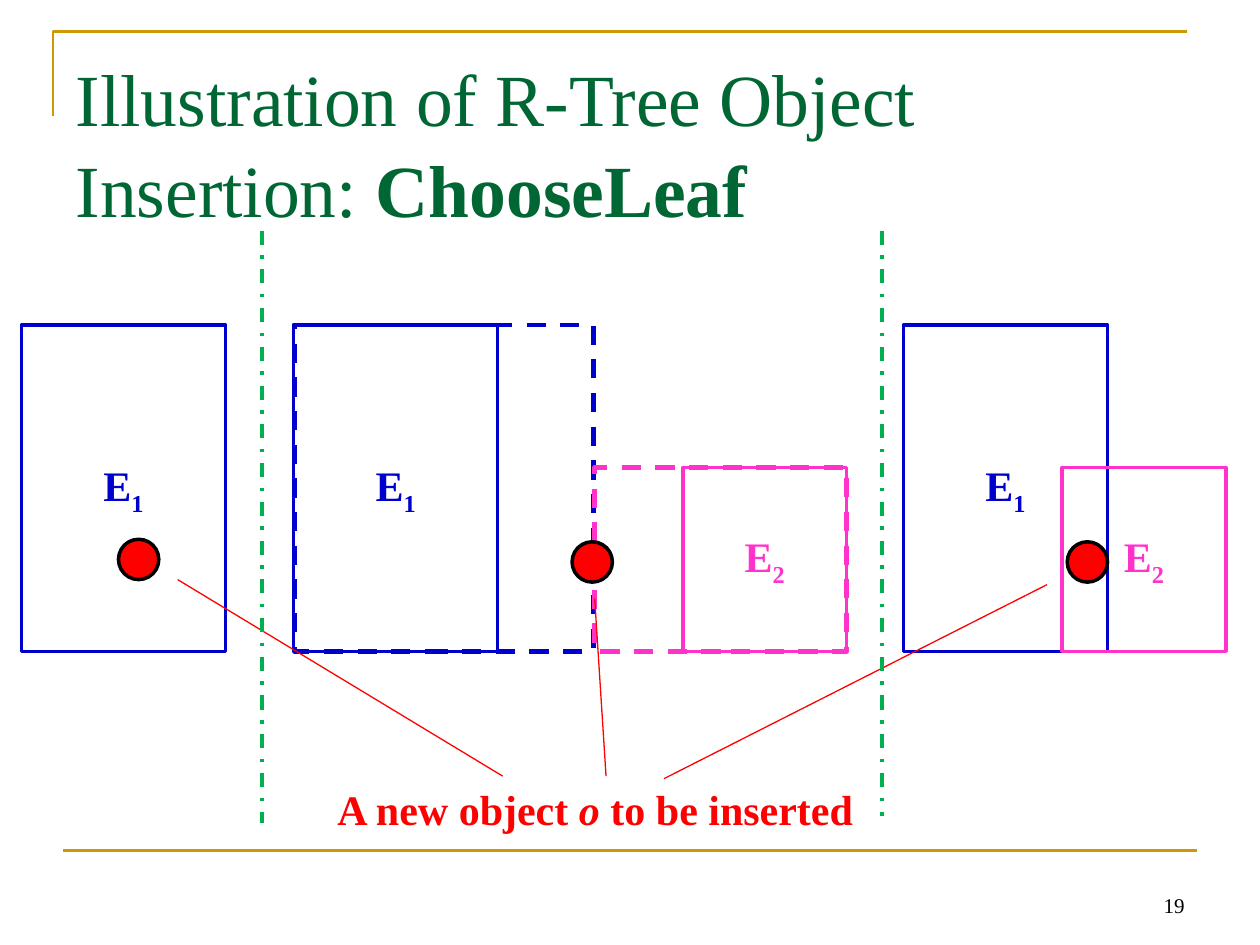
from lxml.etree import SubElement
from pptx import Presentation
from pptx.dml.color import RGBColor
from pptx.enum.dml import MSO_LINE_DASH_STYLE as Dash
from pptx.enum.shapes import MSO_CONNECTOR as Connector, MSO_SHAPE as Shape
from pptx.enum.text import MSO_ANCHOR as Anchor, PP_ALIGN as Align
from pptx.oxml.ns import qn
from pptx.util import Inches, Pt

COLORS = {
    "gold": "CC9900", "title": "006633", "blue": "0000CC", "pink": "FF33CC",
    "red": "FF0000", "green": "00B050", "black": "000000", "white": "FFFFFF",
}
FONT = "Times New Roman"
E1_TOP, E1_SIZE = 2.58, (1.62, 2.59)
E2_TOP, E2_SIZE = 3.71, (1.3, 1.46)
OBJECT_SIZE = 0.32


def color(name):
    """Return the named palette colour."""
    return RGBColor.from_string(COLORS[name])


def set_font(paragraph, size, name, bold=None):
    """Format a whole paragraph."""
    paragraph.font.name = FONT
    paragraph.font.size = Pt(size)
    paragraph.font.bold = bold
    paragraph.font.color.rgb = color(name)


def set_line(line, name, width, dash=None):
    """Set the colour, width and dash of an outline."""
    line.color.rgb = color(name)
    line.width = Pt(width)
    if dash is not None:
        line.dash_style = dash


def add_line(slide, start, end, name, width, dash=None):
    """Draw a straight line without a shadow."""
    points = [Inches(value) for value in (*start, *end)]
    connector = slide.shapes.add_connector(Connector.STRAIGHT, *points)
    set_line(connector.line, name, width, dash)
    SubElement(connector._element.spPr, qn("a:effectLst"))


def add_outlined(slide, kind, box, line_color, width, fill=None, dash=None):
    """Draw a preset shape with an outline and an optional fill."""
    shape = slide.shapes.add_shape(kind, *[Inches(value) for value in box])
    shape.shadow.inherit = False
    if fill:
        shape.fill.solid()
        shape.fill.fore_color.rgb = color(fill)
    else:
        shape.fill.background()
    set_line(shape.line, line_color, width, dash)
    return shape


def add_entry(slide, left, top, size, name, number, fill="white"):
    """Draw a node entry rectangle labelled E with a subscript."""
    shape = add_outlined(slide, Shape.RECTANGLE, (left, top, *size), name, 2, fill)
    shape.text_frame.vertical_anchor = Anchor.MIDDLE
    paragraph = shape.text_frame.paragraphs[0]
    paragraph.alignment = Align.CENTER
    paragraph.add_run().text = "E"
    subscript = paragraph.add_run()
    subscript.text = number
    subscript.font._element.set("baseline", "-25000")
    set_font(paragraph, 24, name, True)


def add_e1(slide, left):
    """Draw entry E1."""
    add_entry(slide, left, E1_TOP, E1_SIZE, "blue", "1")


def add_e2(slide, left, fill="white"):
    """Draw entry E2."""
    add_entry(slide, left, E2_TOP, E2_SIZE, "pink", "2", fill)


def add_enlargement(slide, box, name):
    """Draw the dashed enlarged bounds of an entry."""
    add_outlined(slide, Shape.RECTANGLE, box, name, 2.75, dash=Dash.DASH)


def add_object(slide, left, top):
    """Draw the new object as a red dot."""
    box = (left, top, OBJECT_SIZE, OBJECT_SIZE)
    add_outlined(slide, Shape.OVAL, box, "black", 2, "red")


def add_text_box(slide, box):
    """Add a wrapping text box and return its text frame."""
    frame = slide.shapes.add_textbox(*[Inches(value) for value in box]).text_frame
    frame.word_wrap = True
    return frame


def add_frame(slide):
    """Draw the gold corner and the footer rule."""
    builder = slide.shapes.build_freeform(Inches(0.42), Inches(0.92))
    corner = [(Inches(0.42), Inches(0.25)), (Inches(9.42), Inches(0.25))]
    builder.add_line_segments(corner, close=False)
    shape = builder.convert_to_shape()
    shape.shadow.inherit = False
    shape.fill.background()
    set_line(shape.line, "gold", 1.5)
    add_line(slide, (0.5, 6.75), (9.5, 6.75), "gold", 1.5)


def fill_title(slide):
    """Place and format the title."""
    title = slide.shapes.title
    title.left, title.top = Inches(0.5), Inches(0.3)
    title.width, title.height = Inches(9), Inches(1.25)
    frame = title.text_frame
    frame.vertical_anchor = Anchor.TOP
    frame.margin_top = Inches(0.09)
    paragraph = frame.paragraphs[0]
    paragraph.alignment = Align.LEFT
    paragraph.line_spacing = 1.04
    paragraph.add_run().text = "Illustration of R-Tree Object Insertion: "
    emphasis = paragraph.add_run()
    emphasis.text = "ChooseLeaf"
    emphasis.font.bold = True
    set_font(paragraph, 42, "title")


def add_caption(slide):
    """Add the caption that names the new object."""
    paragraph = add_text_box(slide, (2.58, 6.17, 4.41, 0.5)).paragraphs[0]
    for text, italic in (("A new object ", None), ("o", True), (" to be inserted", None)):
        run = paragraph.add_run()
        run.text = text
        run.font.italic = italic
    set_font(paragraph, 24, "red", True)


def add_page_number(slide):
    """Add the page number."""
    frame = add_text_box(slide, (7.17, 6.83, 2.33, 0.5))
    frame.vertical_anchor = Anchor.BOTTOM
    paragraph = frame.paragraphs[0]
    paragraph.text = "19"
    paragraph.alignment = Align.RIGHT
    set_font(paragraph, 12, "black")


def main():
    """Build and save the slide."""
    presentation = Presentation()
    presentation.slide_width, presentation.slide_height = Inches(10), Inches(7.5)
    slide = presentation.slides.add_slide(presentation.slide_layouts[5])
    fill_title(slide)
    add_frame(slide)

    add_e1(slide, 2.33)
    add_e2(slide, 5.42)
    add_enlargement(slide, (2.34, E1_TOP, 2.37, E1_SIZE[1]), "blue")
    add_enlargement(slide, (4.72, E2_TOP, 2, E2_SIZE[1]), "pink")
    add_line(slide, (4.72, 4.75), (4.81, 6.16), "red", 0.75)
    add_caption(slide)

    add_e1(slide, 7.17)
    add_e2(slide, 8.43, fill=None)
    add_object(slide, 8.47, 4.3)
    add_line(slide, (8.31, 4.64), (5.27, 6.18), "red", 0.75)

    add_e1(slide, 0.17)
    add_object(slide, 0.94, 4.28)
    add_object(slide, 4.54, 4.3)
    add_line(slide, (3.99, 6.16), (1.41, 4.6), "red", 0.75)

    for x, bottom in ((2.08, 6.53), (7, 6.48)):
        add_line(slide, (x, 1.83), (x, bottom), "green", 2, Dash.DASH_DOT)
    add_page_number(slide)
    presentation.save("out.pptx")


if __name__ == "__main__":
    main()
